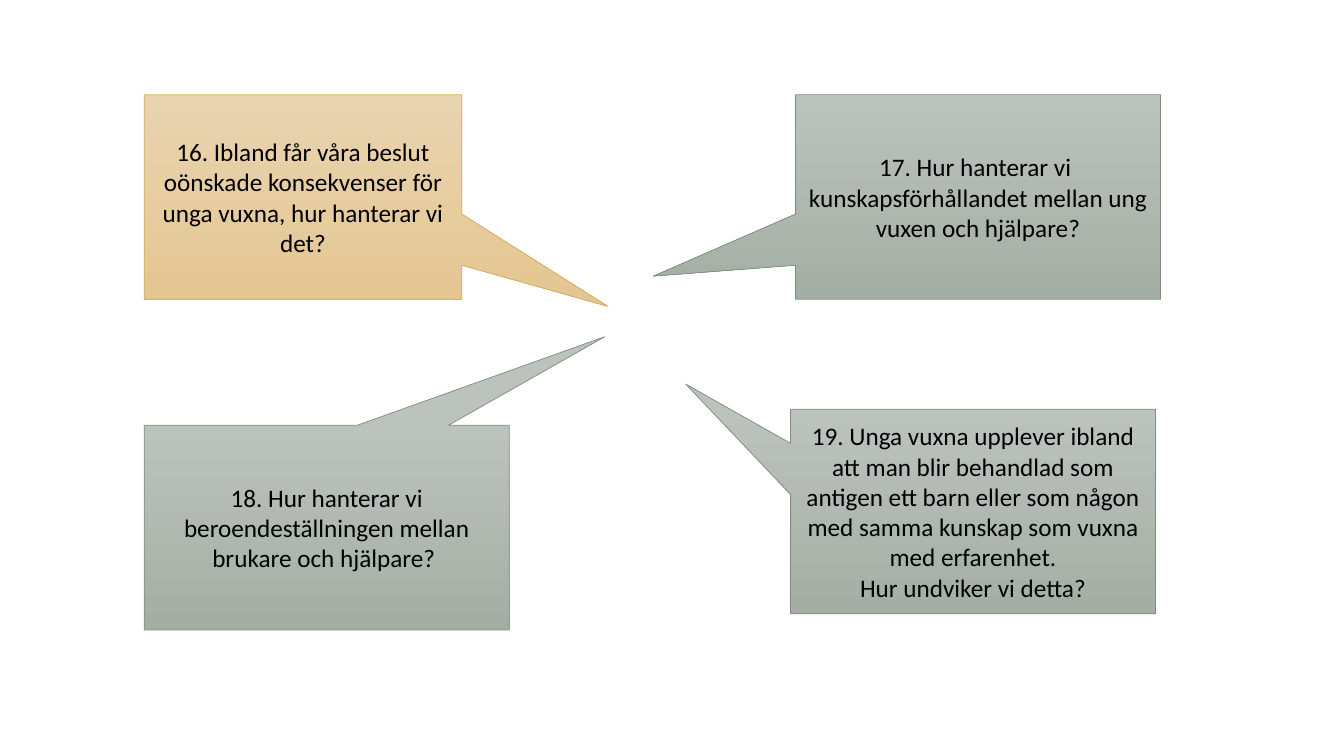
from dataclasses import dataclass

import pptx
import pptx.dml.color
import pptx.enum.shapes
import pptx.enum.text
import pptx.util

PX = 9144  # EMU per px, 100 px to the inch


@dataclass(frozen=True)
class Theme:
    font: str = "Calibri"
    size: int = 18
    line: float = 0.5
    ink: str = "000000"
    # Each tone: gradient top, gradient bottom, outline
    gold: tuple = ("E9D4B0", "E4C692", "D5AE59")
    sage: tuple = ("BCC3BC", "A5AEA5", "7E8C7E")


def rgb(code):
    return pptx.dml.color.RGBColor.from_string(code)


def apply(target, values):
    for name, value in values.items():
        setattr(target, name, value)


class Board:
    def __init__(self, slide, theme):
        self.slide = slide
        self.theme = theme

    def callout(self, box, tip, tone, lines):
        """Add a speech box whose pointer ends at tip."""
        left, top, width, height = box
        kind = pptx.enum.shapes.MSO_SHAPE.RECTANGULAR_CALLOUT
        shape = self.slide.shapes.add_shape(kind, *(n * PX for n in box))
        shape.shadow.inherit = False

        # Pointer offset from the centre, as a share of the box
        shape.adjustments[0] = (tip[0] - left) / width - 0.5
        shape.adjustments[1] = (tip[1] - top) / height - 0.5

        # Fill and outline
        *stops, edge = tone
        shape.fill.gradient()
        shape.fill.gradient_angle = 270
        for stop, code in zip(shape.fill.gradient_stops, stops):
            stop.color.rgb = rgb(code)
        shape.line.color.rgb = rgb(edge)
        shape.line.width = pptx.util.Pt(self.theme.line)
        self.text(shape.text_frame, lines)

    def text(self, frame, lines):
        """Write one centred paragraph per line."""
        apply(frame, {
            "word_wrap": True,
            "vertical_anchor": pptx.enum.text.MSO_ANCHOR.MIDDLE,
        })
        style = {"name": self.theme.font,
                 "size": pptx.util.Pt(self.theme.size)}
        for i, line in enumerate(lines):
            para = frame.add_paragraph() if i else frame.paragraphs[0]
            para.alignment = pptx.enum.text.PP_ALIGN.CENTER
            run = para.add_run()
            run.text = line
            apply(run.font, style)
            run.font.color.rgb = rgb(self.theme.ink)


def main():
    deck = pptx.Presentation()
    apply(deck, {"slide_width": 1333 * PX, "slide_height": 750 * PX})
    theme = Theme()
    board = Board(deck.slides.add_slide(deck.slide_layouts[6]), theme)

    # Questions: box, pointer tip, tone, paragraphs
    tall, wide = 203, 362
    asks = [
        ((143, 94, 315, tall), (603, 304), theme.gold,
         ["16. Ibland får våra beslut oönskade konsekvenser för "
          "unga vuxna, hur hanterar vi det?"]),
        ((784, 406, wide, tall), (680, 381), theme.sage,
         ["19. Unga vuxna upplever ibland att man blir behandlad som "
          "antigen ett barn eller som någon med samma kunskap som vuxna "
          "med erfarenhet.",
          "Hur undviker vi detta?"]),
        ((789, 94, wide, tall), (648, 274), theme.sage,
         ["17. Hur hanterar vi  kunskapsförhållandet mellan "
          "ung vuxen och hjälpare?"]),
        ((143, 422, wide, tall), (600, 334), theme.sage,
         ["18. Hur hanterar vi beroendeställningen mellan "
          "brukare och hjälpare? "]),
    ]
    for ask in asks:
        board.callout(*ask)

    deck.save("out.pptx")


if __name__ == "__main__":
    main()
